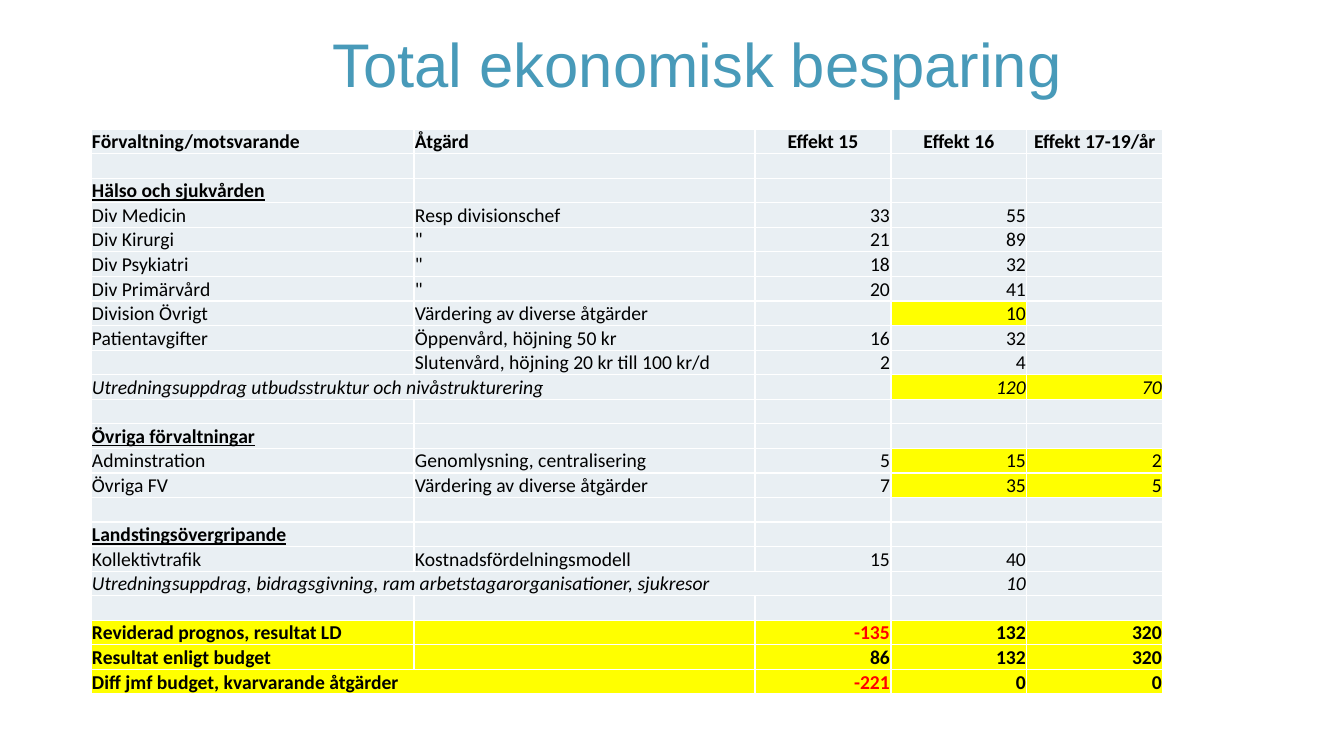
from dataclasses import dataclass

from lxml.etree import SubElement
from pptx import Presentation
from pptx.dml.color import RGBColor
from pptx.enum.text import MSO_ANCHOR, PP_ALIGN
from pptx.oxml.ns import qn
from pptx.util import Pt

EMU_PER_PX = 914400 / 100.8


@dataclass(frozen=True)
class Theme:
    title_color: str = "489AB9"
    text_color: str = "000000"
    negative_color: str = "FF0000"
    cell_fill: str = "E9EFF3"
    highlight_fill: str = "FFFF00"
    border_color: str = "FFFFFF"
    title_font: str = "Arial"
    table_font: str = "Calibri"
    title_size: int = 44
    table_size: int = 14
    border_width: int = 1


THEME = Theme()

ROW_FORMATS = {
    "header": {"bold": True},
    "section": {"bold": True, "underline": True},
    "item": {},
    "assignment": {"italic": True},
    "result": {"bold": True},
    "blank": {},
}

COLUMN_WIDTHS = [323, 341, 136, 136, 136]
ROW_HEIGHT = 24
NUMBER_COLUMNS = (2, 3, 4)
BLANK = ("blank", ["", "", "", "", ""], (), 1)

# Each row: kind, cell texts, highlighted columns, columns spanned by the first cell
ROWS = [
    ("header", ["Förvaltning/motsvarande", "Åtgärd", "Effekt 15", "Effekt 16", "Effekt 17-19/år"], (), 1),
    BLANK,
    ("section", ["Hälso och sjukvården", "", "", "", ""], (), 1),
    ("item", ["Div Medicin", "Resp divisionschef", "33", "55", ""], (), 1),
    ("item", ["Div Kirurgi", '"', "21", "89", ""], (), 1),
    ("item", ["Div Psykiatri", '"', "18", "32", ""], (), 1),
    ("item", ["Div Primärvård", '"', "20", "41", ""], (), 1),
    ("item", ["Division Övrigt", "Värdering av diverse åtgärder", "", "10", ""], (3,), 1),
    ("item", ["Patientavgifter", "Öppenvård, höjning 50 kr", "16", "32", ""], (), 1),
    ("item", ["", "Slutenvård, höjning 20 kr till 100 kr/d", "2", "4", ""], (), 1),
    ("assignment", ["Utredningsuppdrag utbudsstruktur och nivåstrukturering", "", "", "120", "70"], (3, 4), 2),
    BLANK,
    ("section", ["Övriga förvaltningar", "", "", "", ""], (), 1),
    ("item", ["Adminstration", "Genomlysning, centralisering", "5", "15", "2"], (3, 4), 1),
    ("item", ["Övriga FV", "Värdering av diverse åtgärder", "7", "35", "5"], (3, 4), 1),
    BLANK,
    ("section", ["Landstingsövergripande", "", "", "", ""], (), 1),
    ("item", ["Kollektivtrafik", "Kostnadsfördelningsmodell", "15", "40", ""], (), 1),
    ("assignment", ["Utredningsuppdrag, bidragsgivning, ram arbetstagarorganisationer, sjukresor",
                    "", "", "10", ""], (), 3),
    BLANK,
    ("result", ["Reviderad prognos, resultat LD", "", "-135", "132", "320"], range(5), 1),
    ("result", ["Resultat enligt budget", "", "86", "132", "320"], range(5), 1),
    ("result", ["Diff jmf budget, kvarvarande åtgärder", "", "-221", "0", "0"], range(5), 2),
]


def px(length):
    return round(length * EMU_PER_PX)


def apply_format(target, values):
    for name, value in values.items():
        setattr(target, name, value)


def write_run(paragraph, text, color, values):
    run = paragraph.add_run()
    run.text = text
    apply_format(run.font, values)
    run.font.color.rgb = RGBColor.from_string(color)


def size_empty_paragraph(paragraph):
    """Give a paragraph without text the line height of the table text."""
    end_properties = SubElement(paragraph._p, qn("a:endParaRPr"), sz=str(THEME.table_size * 100))
    SubElement(end_properties, qn("a:latin"), typeface=THEME.table_font)


def draw_borders(cell):
    """Put the four border lines ahead of the cell's fill, as the schema orders them."""
    properties = cell._tc.get_or_add_tcPr()
    for position, side in enumerate(("lnL", "lnR", "lnT", "lnB")):
        line = SubElement(properties, qn(f"a:{side}"), w=str(Pt(THEME.border_width)))
        fill = SubElement(line, qn("a:solidFill"))
        SubElement(fill, qn("a:srgbClr"), val=THEME.border_color)
        properties.insert(position, line)


def fill_cell(cell, text, kind, column, highlighted):
    apply_format(cell, {
        "margin_left": px(1), "margin_right": px(1), "margin_top": px(1), "margin_bottom": 0,
        "vertical_anchor": MSO_ANCHOR.BOTTOM,
    })
    cell.fill.solid()
    color = THEME.highlight_fill if highlighted else THEME.cell_fill
    cell.fill.fore_color.rgb = RGBColor.from_string(color)
    draw_borders(cell)
    paragraph = cell.text_frame.paragraphs[0]
    if not text:
        size_empty_paragraph(paragraph)
        return
    if column in NUMBER_COLUMNS:
        paragraph.alignment = PP_ALIGN.CENTER if kind == "header" else PP_ALIGN.RIGHT
    text_color = THEME.negative_color if text.startswith("-") else THEME.text_color
    base = {"name": THEME.table_font, "size": Pt(THEME.table_size),
            "bold": False, "italic": False, "underline": False}
    write_run(paragraph, text, text_color, base | ROW_FORMATS[kind])


def add_title(slide, text):
    shape = slide.shapes.add_textbox(px(118), px(17), px(1159), px(102))
    apply_format(shape.text_frame, {"word_wrap": True, "vertical_anchor": MSO_ANCHOR.MIDDLE})
    paragraph = shape.text_frame.paragraphs[0]
    apply_format(paragraph, {"alignment": PP_ALIGN.CENTER, "line_spacing": 0.9})
    write_run(paragraph, text, THEME.title_color,
              {"name": THEME.title_font, "size": Pt(THEME.title_size)})


def add_savings_table(slide):
    shape = slide.shapes.add_table(len(ROWS), len(COLUMN_WIDTHS), px(91), px(129),
                                   px(sum(COLUMN_WIDTHS)), px(ROW_HEIGHT * len(ROWS)))
    table = shape.table
    apply_format(table, {"first_row": False, "horz_banding": False})
    for column, width in zip(table.columns, COLUMN_WIDTHS):
        column.width = px(width)
    for row_index, (kind, texts, highlights, span) in enumerate(ROWS):
        table.rows[row_index].height = px(ROW_HEIGHT)
        for column, text in enumerate(texts):
            fill_cell(table.cell(row_index, column), text, kind, column, column in highlights)
        if span > 1:
            table.cell(row_index, 0).merge(table.cell(row_index, span - 1))


def main():
    presentation = Presentation()
    apply_format(presentation, {"slide_width": px(1344), "slide_height": px(756)})
    slide = presentation.slides.add_slide(presentation.slide_layouts[6])
    add_title(slide, "Total ekonomisk besparing")
    add_savings_table(slide)
    presentation.save("out.pptx")


if __name__ == "__main__":
    main()
